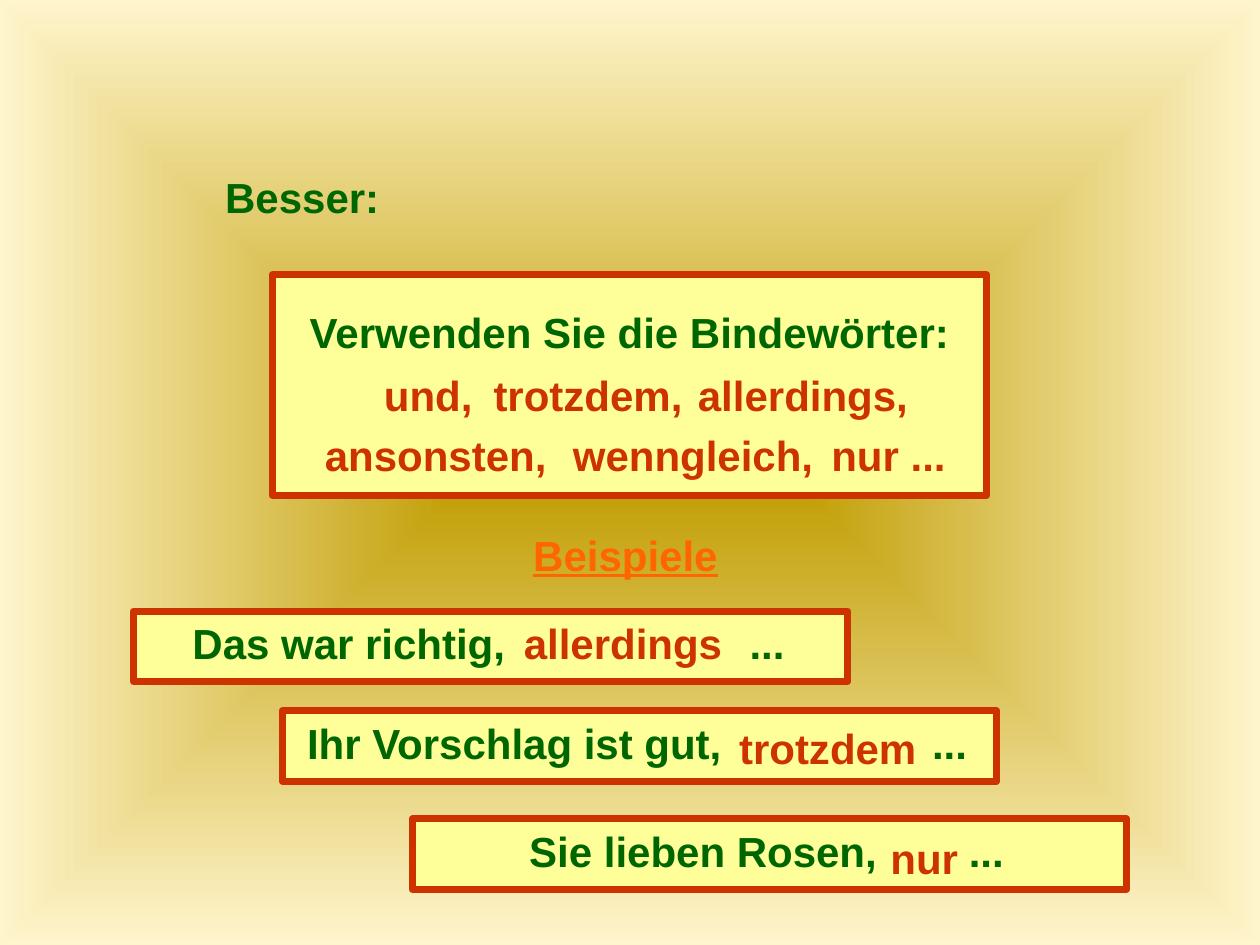
import pptx
import pptx.dml.color
import pptx.enum.shapes
import pptx.enum.text
import pptx.oxml
import pptx.util
from lxml import etree

Cm, Pt = pptx.util.Cm, pptx.util.Pt
RGBColor = pptx.dml.color.RGBColor
ALIGN = pptx.enum.text.PP_ALIGN

GREEN = RGBColor(0x00, 0x66, 0x00)
RED = RGBColor(0xCC, 0x33, 0x00)
ORANGE = RGBColor(0xFF, 0x66, 0x00)
YELLOW = RGBColor(0xFF, 0xFF, 0x99)
GOLD = RGBColor(0xC0, 0x9C, 0x00)
CREAM = RGBColor(0xFF, 0xF5, 0xCC)

# Content; all lengths in centimetres
HEADING = "Verwenden Sie die Bindewörter:"
LABELS = [  # text, left, top, width, colour, underlined
    ("Besser:", 4.29, 3.33, 5.79, GREEN, False),
    ("Beispiele", 10.5, 10.54, 5, ORANGE, True),
]
CONJUNCTION_ROWS = [  # top, then (word, left, width)
    (7.32, [("und,", 7.49, 2.79), ("trotzdem,", 9.7, 4.8),
            ("allerdings,", 13.82, 5)]),
    (8.53, [("ansonsten,", 6.3, 5.59), ("wenngleich,", 11.3, 6.4),
            ("nur ...", 16.51, 3.2)]),
]
EXAMPLES = [  # opening, left, top, inset, tab to dots, word, its left, top, width
    ("Das war richtig,", 2.69, 12.32, 1.19, 11.23, "allerdings", 10.31, 12.32, 4.6),
    ("Ihr Vorschlag ist gut,", 5.69, 14.33, 0.5, 12.6, "trotzdem", 14.65, 14.45, 4.25),
    ("Sie lieben Rosen,", 8.31, 16.51, 2.36, 8.86, "nur", 17.7, 16.66, 2),
]
PANEL_WIDTH, HEADING_HEIGHT, EXAMPLE_HEIGHT, LABEL_HEIGHT = 14.4, 4.45, 1.42, 1.27


def write(box, text, color=GREEN, align=ALIGN.LEFT, underline=None,
          spacing=None, inset=0.25, tab=None):
    frame = box.text_frame
    frame.word_wrap = True
    frame.vertical_anchor = pptx.enum.text.MSO_ANCHOR.TOP
    frame.margin_left, frame.margin_right = Cm(inset), Cm(0.25)
    para = frame.paragraphs[0]
    para.alignment = align
    para.space_before = Pt(12)
    if spacing:
        para.line_spacing = spacing
    if tab:
        stops = etree.SubElement(para._p.get_or_add_pPr(), pptx.oxml.ns.qn("a:tabLst"))
        etree.SubElement(stops, pptx.oxml.ns.qn("a:tab"), pos=str(Cm(tab)), algn="l")
    span = para.add_run()
    span.text = text
    font = span.font
    font.name, font.size, font.bold = "Arial", Pt(24), True
    font.underline = underline
    font.color.rgb = color


def add_label(page, text, left, top, width, color, underline=None):
    box = page.shapes.add_textbox(Cm(left), Cm(top), Cm(width), Cm(LABEL_HEIGHT))
    write(box, text, color=color, underline=underline)


def add_panel(page, text, left, top, height, **text_format):
    box = page.shapes.add_shape(
        pptx.enum.shapes.MSO_SHAPE.RECTANGLE,
        Cm(left), Cm(top), Cm(PANEL_WIDTH), Cm(height))
    box.shadow.inherit = False
    box.fill.solid()
    box.fill.fore_color.rgb = YELLOW
    box.line.color.rgb = RED
    box.line.width = Pt(4)
    write(box, text, **text_format)


def paint_background(page):
    fill = page.background.fill
    fill.gradient()
    for stop, color in zip(fill.gradient_stops, (GOLD, CREAM)):
        stop.color.rgb = color
    # Swap the linear direction for a rectangular one around the centre
    qn = pptx.oxml.ns.qn
    gradient = page._element.find(".//" + qn("a:gradFill"))
    gradient.remove(gradient.find(qn("a:lin")))
    shading = etree.SubElement(gradient, qn("a:path"), {"path": "shape"})
    etree.SubElement(shading, qn("a:fillToRect"),
                     {side: "50000" for side in "ltrb"})


def main():
    deck = pptx.Presentation()
    deck.slide_width, deck.slide_height = Cm(25.4), Cm(19.05)
    page = deck.slides.add_slide(deck.slide_layouts[6])
    paint_background(page)

    # Headings
    for text, left, top, width, color, underline in LABELS:
        add_label(page, text, left, top, width, color, underline)

    # Conjunctions
    add_panel(page, HEADING, 5.49, 5.54, HEADING_HEIGHT,
              align=ALIGN.CENTER, spacing=1.5)
    for top, words in CONJUNCTION_ROWS:
        for word, left, width in words:
            add_label(page, word, left, top, width, RED)

    # Example sentences, each with its conjunction set into the gap
    for opening, left, top, inset, tab, word, word_left, word_top, width in EXAMPLES:
        add_panel(page, opening + "\t...", left, top, EXAMPLE_HEIGHT,
                  inset=inset, tab=tab)
        add_label(page, word, word_left, word_top, width, RED)

    deck.save("out.pptx")


if __name__ == "__main__":
    main()
